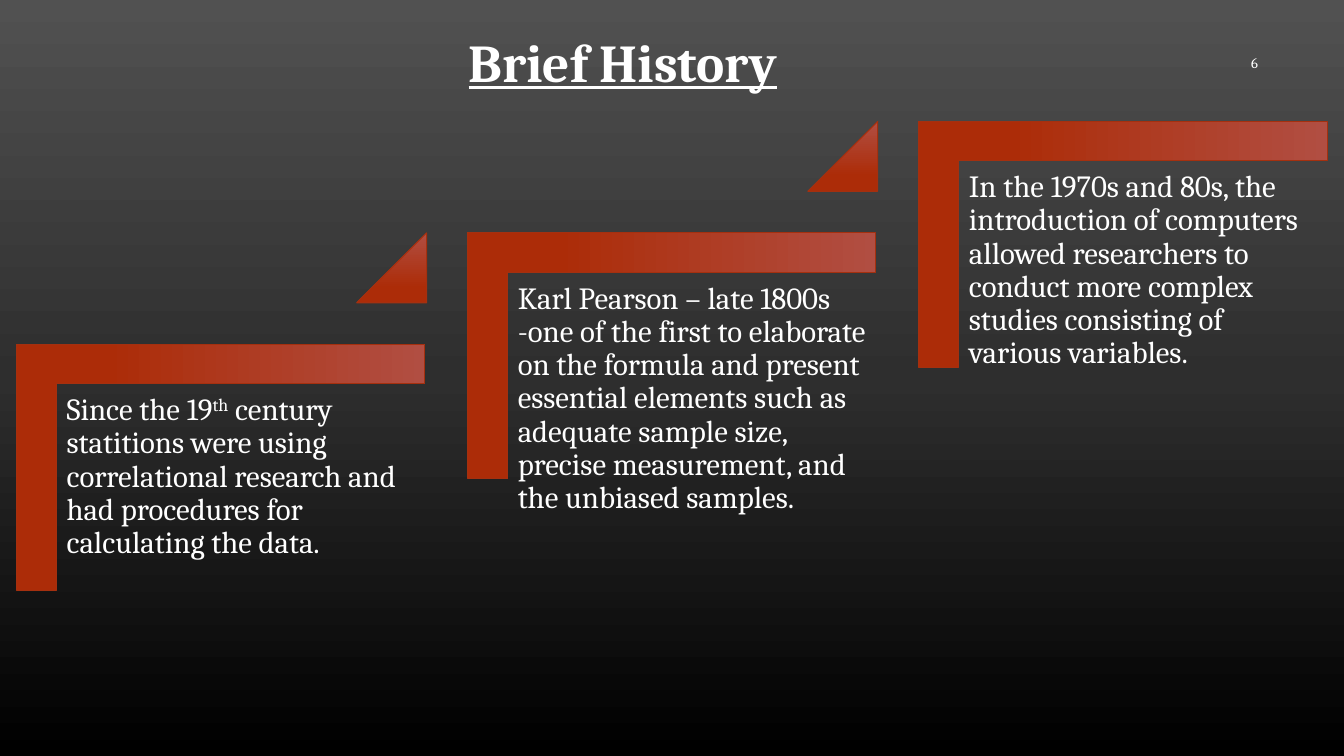
from copy import deepcopy

from pptx import Presentation
from pptx.dml.color import RGBColor
from pptx.enum.shapes import MSO_SHAPE
from pptx.enum.text import MSO_ANCHOR, MSO_AUTO_SIZE, PP_ALIGN
from pptx.util import Cm, Pt

CORNER = MSO_SHAPE.CORNER
WEDGE = MSO_SHAPE.ISOSCELES_TRIANGLE
LEFT, CENTER, RIGHT = PP_ALIGN.LEFT, PP_ALIGN.CENTER, PP_ALIGN.RIGHT
TOP, MIDDLE = MSO_ANCHOR.TOP, MSO_ANCHOR.MIDDLE
GROW = MSO_AUTO_SIZE.SHAPE_TO_FIT_TEXT

# Each step is a list of (text, raised) runs
STEPS = [
    [("Since the 19", False), ("th", True),
     (" century statitions were using correlational research and had "
      "procedures for calculating the data.", False)],
    [("Karl Pearson – late 1800s -one of the first to elaborate on the "
      "formula and present essential elements such as adequate sample size, "
      "precise measurement, and the unbiased samples.", False)],
    [("In the 1970s and 80s, the introduction of computers allowed "
      "researchers to conduct more complex studies consisting of various "
      "variables.", False)],
]
STEP_X, STEP_Y = 11.37, -2.81


def color(code):
    return RGBColor.from_string(code)


class Deck:
    font = "Cambria"
    ink = "FFFFFF"
    edge = "A5300F"
    reds = [(0, "B14E42"), (0.78, "AC2C08")]
    grays = [(0, "515151"), (0.5, "2E2E2E"), (1, "000000")]

    def __init__(self, prs):
        self.slide = prs.slides.add_slide(prs.slide_layouts[6])

    def shade(self, fill, owner, stops):
        """Fill with a top-to-bottom gradient; owner is the XML around it."""
        fill.gradient()
        fill.gradient_angle = 270
        holder = owner.xpath(".//a:gsLst")[0]
        while len(holder) < len(stops):
            holder.append(deepcopy(holder[-1]))
        for stop, (pos, code) in zip(fill.gradient_stops, stops):
            stop.position = pos
            stop.color.rgb = color(code)

    def backdrop(self):
        self.shade(self.slide.background.fill, self.slide.element, self.grays)

    def shape(self, kind, x, y, w, h, adjust, turn=0):
        item = self.slide.shapes.add_shape(kind, Cm(x), Cm(y), Cm(w), Cm(h))
        item.shadow.inherit = False
        item.rotation = turn
        for i, value in enumerate(adjust):
            item.adjustments[i] = value
        self.shade(item.fill, item.element, self.reds)
        item.line.color.rgb = color(self.edge)
        item.line.width = Pt(0.75)

    def text(self, runs, x, y, w, h, size, align=LEFT, anchor=TOP, wrap=True):
        box = self.slide.shapes.add_textbox(Cm(x), Cm(y), Cm(w), Cm(h))
        frame = box.text_frame
        frame.word_wrap = wrap
        frame.vertical_anchor = anchor
        para = frame.paragraphs[0]
        para.alignment = align
        para.font.name = self.font
        para.font.size = Pt(size)
        para.font.color.rgb = color(self.ink)
        for words, raised in runs:
            run = para.add_run()
            run.text = words
            if raised:
                run.font._element.set("baseline", "30000")
        return frame

    def title(self, words):
        frame = self.text([(words, False)], 10.82, 0.61, 9.75, 3.58, 38,
                          CENTER, wrap=False)
        frame.auto_size = GROW
        font = frame.paragraphs[0].font
        font.bold = font.underline = True

    def step(self, runs, dx, dy, wedge):
        self.shape(CORNER, 2.46 + dx, 6.63 + dy, 6.2, 10.29,
                   [0.161, 0.161], 90)
        frame = self.text(runs, 1.45 + dx, 9.7 + dy, 9.3, 8.15, 22)
        frame.margin_left = frame.margin_right = Cm(0.23)
        frame.margin_top = frame.margin_bottom = Cm(0.23)
        frame.paragraphs[0].line_spacing = 0.9
        if wedge:
            self.shape(WEDGE, 8.99 + dx, 5.87 + dy, 1.76, 1.76, [1])


def main():
    prs = Presentation()
    prs.slide_width, prs.slide_height = Cm(33.87), Cm(19.05)
    deck = Deck(prs)
    deck.backdrop()
    deck.text([("6", False)], 24.33, 1.07, 7.62, 1.02, 10.5, RIGHT, MIDDLE)
    for i, runs in enumerate(STEPS):
        deck.step(runs, i * STEP_X, i * STEP_Y, i < len(STEPS) - 1)
    deck.title("Brief History")
    prs.save("out.pptx")


if __name__ == "__main__":
    main()
